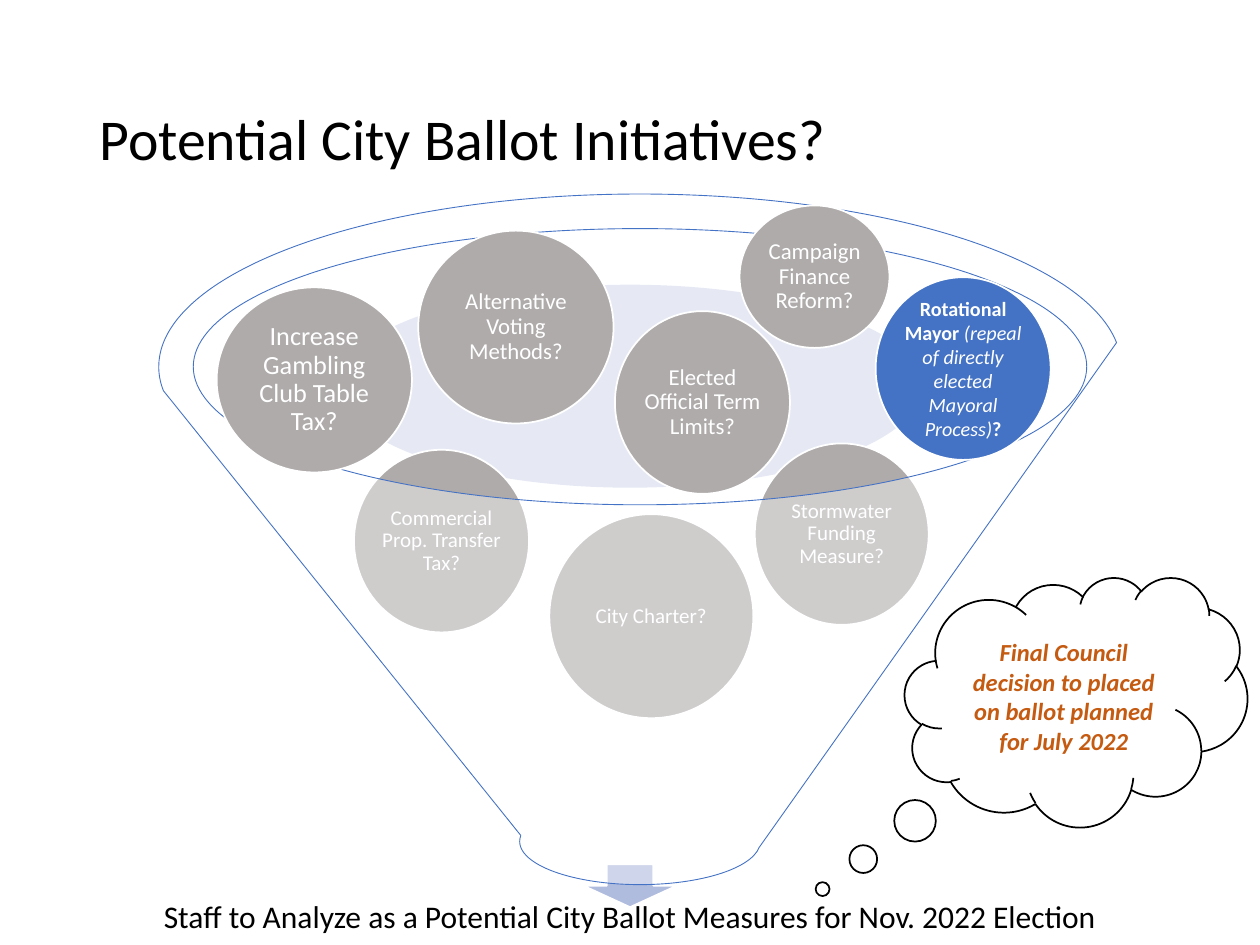
from lxml import etree
from pptx import Presentation
from pptx.dml.color import RGBColor
from pptx.enum import shapes, text
from pptx.oxml.ns import qn
from pptx.util import Pt

FONT = "Calibri"
WHITE = RGBColor(0xFF, 0xFF, 0xFF)
BLACK = RGBColor(0, 0, 0)
GRAY = RGBColor(0xAF, 0xAB, 0xAB)
BLUE = RGBColor(0x44, 0x72, 0xC4)
PALE_BLUE = RGBColor(0xC1, 0xC9, 0xE4)
ARROW_BLUE = RGBColor(0xB0, 0xBC, 0xDE)
ORANGE = RGBColor(0xC5, 0x5A, 0x11)
CENTER = text.PP_ALIGN.CENTER

presentation = Presentation()
presentation.slide_width, presentation.slide_height = Pt(720), Pt(540)
slide = presentation.slides.add_slide(presentation.slide_layouts[6])


def add_shape(kind, box, fill=None, line=None, width=1, opacity=None):
    """Add a preset shape; box is left, top, width, height in points."""
    shape = slide.shapes.add_shape(kind, *map(Pt, box))
    shape.shadow.inherit = False
    if fill is None:
        shape.fill.background()
    else:
        shape.fill.solid()
        shape.fill.fore_color.rgb = fill
    if opacity is not None:
        color = shape.fill._xPr.find(qn("a:solidFill"))[0]
        etree.SubElement(color, qn("a:alpha")).set("val", str(opacity * 1000))
    if line is None:
        shape.line.fill.background()
    else:
        shape.line.color.rgb = line
        shape.line.width = Pt(width)
    return shape


def write(shape, runs, size, color, align=CENTER, spacing=0.9, insets=(7.2, 3.6)):
    """Write one paragraph; each run is its wording, bold and italic."""
    frame = shape.text_frame
    frame.word_wrap = True
    frame.vertical_anchor = text.MSO_ANCHOR.MIDDLE
    frame.margin_left = frame.margin_right = Pt(insets[0])
    frame.margin_top = frame.margin_bottom = Pt(insets[1])
    paragraph = frame.paragraphs[0]
    paragraph.alignment = align
    paragraph.line_spacing = spacing
    for wording, bold, italic in runs:
        run = paragraph.add_run()
        run.text = wording
        run.font.name, run.font.size = FONT, Pt(size)
        run.font.bold, run.font.italic = bold, italic
        run.font.color.rgb = color


# Pool inside the funnel and arrow below it
kinds = shapes.MSO_SHAPE
add_shape(kinds.OVAL, (193, 162.7, 334, 116), PALE_BLUE, opacity=40)
add_shape(kinds.DOWN_ARROW, (333.4, 493.9, 53.3, 24.5), ARROW_BLUE, WHITE)

# Outcome under the funnel
outcome = slide.shapes.add_textbox(Pt(35.3), Pt(486), Pt(649.4), Pt(77.8))
write(outcome, [("Staff to Analyze as a Potential City Ballot Measures for Nov. 2022 Election",
                 False, False)], 18, BLACK, insets=(10, 10))

# Initiatives: box, fill, text size, line spacing, runs
inside = [
    ((313.9, 293.8, 116.6, 116.6), GRAY, 12, 0.9, [("City Charter?", False, False)]),
    ((202.3, 257, 100, 104.4), GRAY, 12, 0.9,
     [("Commercial Prop. Transfer Tax?", False, False)]),
    ((431.3, 253.4, 99.4, 103.7), GRAY, 12, 0.9,
     [("Stormwater Funding Measure?", False, False)]),
]
on_top = [
    ((351.4, 177.8, 100, 104.4), GRAY, 13, 0.9,
     [("Elected Official Term Limits?", False, False)]),
    ((500.4, 158.4, 100, 104.4), BLUE, 11.5, 1,
     [("Rotational Mayor ", True, False),
      ("(repeal of directly elected Mayoral Process)", False, True),
      ("?", True, False)]),
    ((422.6, 117.4, 85.7, 81.4), GRAY, 13, 0.9,
     [("Campaign Finance Reform?", False, False)]),
    ((239, 131.8, 111.6, 110.2), GRAY, 13, 0.9,
     [("Alternative Voting Methods?", False, False)]),
    ((123.8, 164.2, 111.6, 105.8), GRAY, 15, 0.9,
     [("Increase Gambling Club Table Tax?", False, False)]),
]

# The translucent funnel lies between the two layers of circles
for layer in (inside, on_top):
    if layer is on_top:
        add_shape(kinds.FUNNEL, (90.7, 110.9, 550, 394.6), WHITE, BLUE, 0.5, 40)
    for box, fill, size, spacing, runs in layer:
        circle = add_shape(kinds.OVAL, box, fill, WHITE)
        write(circle, runs, size, WHITE, spacing=spacing, insets=(1.4, 1.4))

# Title
title = slide.shapes.add_textbox(Pt(49.7), Pt(28.8), Pt(620.6), Pt(104.4))
write(title, [("Potential City Ballot Initiatives?", False, False)], 33, BLACK,
      align=text.PP_ALIGN.LEFT)

# Thought cloud
cloud = add_shape(kinds.CLOUD_CALLOUT, (517, 329.8, 195.8, 142.6), line=BLACK)
cloud.adjustments[0], cloud.adjustments[1] = -0.74, 0.75
write(cloud, [("Final Council decision to placed on ballot planned for July 2022", True, True)],
      14, ORANGE, spacing=1)

presentation.save("out.pptx")
